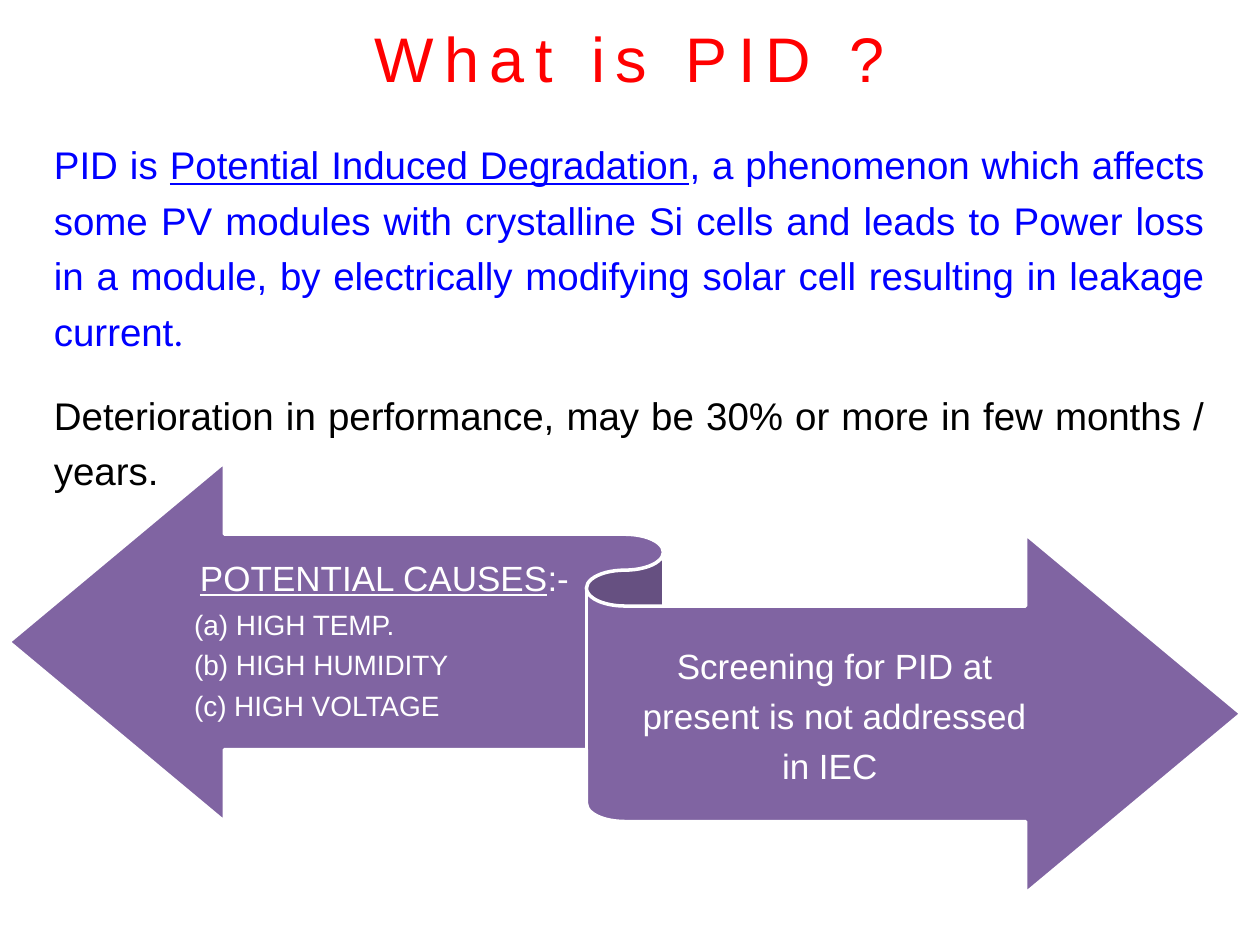
from dataclasses import dataclass

from pptx import Presentation
from pptx.dml.color import RGBColor
from pptx.enum.shapes import MSO_SHAPE
from pptx.enum.text import MSO_ANCHOR, PP_ALIGN
from pptx.util import Inches, Pt

RIBBON = MSO_SHAPE.LEFT_RIGHT_RIBBON
TOP, MIDDLE = MSO_ANCHOR.TOP, MSO_ANCHOR.MIDDLE
LEFT, CENTER, JUSTIFY = PP_ALIGN.LEFT, PP_ALIGN.CENTER, PP_ALIGN.JUSTIFY
RED, BLUE, BLACK, WHITE, PURPLE = "FF0000", "0000FF", "000000", "FFFFFF", "8064A2"


@dataclass
class Span:
    """A stretch of text with one look."""
    text: str
    underline: bool = False
    font: str = "Arial"


@dataclass
class Line:
    """A paragraph and its format."""
    spans: list[Span]
    size: float
    color: str
    align: PP_ALIGN = LEFT
    spacing: float = 1.0
    before: float = 0
    after: float = 0
    tracking: float = 0


def rgb(color: str) -> RGBColor:
    """Turn a hex string into a colour."""
    return RGBColor.from_string(color)


def add_text(page, place: tuple, lines: list[Line], *, anchor=TOP, side=0.1, edge=0.05) -> None:
    """Add a wrapped text box holding the given lines."""
    frame = page.shapes.add_textbox(*map(Inches, place)).text_frame
    frame.word_wrap = True
    frame.vertical_anchor = anchor
    frame.margin_left = frame.margin_right = Inches(side)
    frame.margin_top = frame.margin_bottom = Inches(edge)
    for index, line in enumerate(lines):
        para = frame.add_paragraph() if index else frame.paragraphs[0]
        para.alignment = line.align
        para.line_spacing = line.spacing
        para.space_before, para.space_after = Pt(line.before), Pt(line.after)
        for span in line.spans:
            run = para.add_run()
            run.text = span.text
            run.font.name = span.font
            run.font.size = Pt(line.size)
            run.font.underline = span.underline
            run.font.color.rgb = rgb(line.color)
            if line.tracking:
                run.font._element.set("spc", str(int(line.tracking * 100)))


def add_ribbon(page, place: tuple) -> None:
    """Add the two-way ribbon behind the causes and the screening note."""
    ribbon = page.shapes.add_shape(RIBBON, *map(Inches, place))
    ribbon.shadow.inherit = False
    ribbon.fill.solid()
    ribbon.fill.fore_color.rgb = rgb(PURPLE)
    ribbon.line.color.rgb = rgb(WHITE)
    ribbon.line.width = Pt(2)


def main() -> None:
    """Build the slide and save it."""
    deck = Presentation()
    deck.slide_width, deck.slide_height = Inches(10), Inches(7.5)
    page = deck.slides.add_slide(deck.slide_layouts[6])

    title = Line([Span("What is PID ?")], 36, RED, CENTER, tracking=6)
    add_text(page, (0.5, 0.08, 9, 0.75), [title], anchor=MIDDLE)

    definition = [
        Span("PID is "),
        Span("Potential Induced Degradation", underline=True),
        Span(", a phenomenon which affects some PV modules with crystalline Si cells "
             "and leads to Power loss in a module, by electrically modifying solar cell "
             "resulting in leakage current"),
        Span(". ", font="Calibri"),
    ]
    effect = [Span("Deterioration in performance, may be 30% or more in few months / years.")]
    add_text(page, (0.33, 1, 9.33, 3.17), [
        Line(definition, 22, BLUE, JUSTIFY, 1.2, after=12),
        Line(effect, 22, BLACK, JUSTIFY, 1.2, before=4.4, after=6),
    ])

    add_ribbon(page, (0.07, 3.67, 9.78, 3.42))
    heading = [Span("POTENTIAL CAUSES", underline=True), Span(":- ")]
    causes = ["(a) HIGH TEMP.", "(b) HIGH HUMIDITY", "(c) HIGH VOLTAGE"]
    add_text(page, (1.54, 4.26, 3.1, 1.67), [
        Line(heading, 20, WHITE, CENTER, 0.9, after=7),
        *(Line([Span(cause)], 16, WHITE, spacing=0.9, after=6) for cause in causes),
    ], anchor=MIDDLE, side=0, edge=0.08)

    screening = [Span("Screening for PID at present is not addressed in IEC ")]
    add_text(page, (4.96, 4.81, 3.33, 1.67), [
        Line(screening, 20, WHITE, CENTER, 1.2, after=7),
    ], anchor=MIDDLE, side=0, edge=0.08)

    deck.save("out.pptx")


if __name__ == "__main__":
    main()
